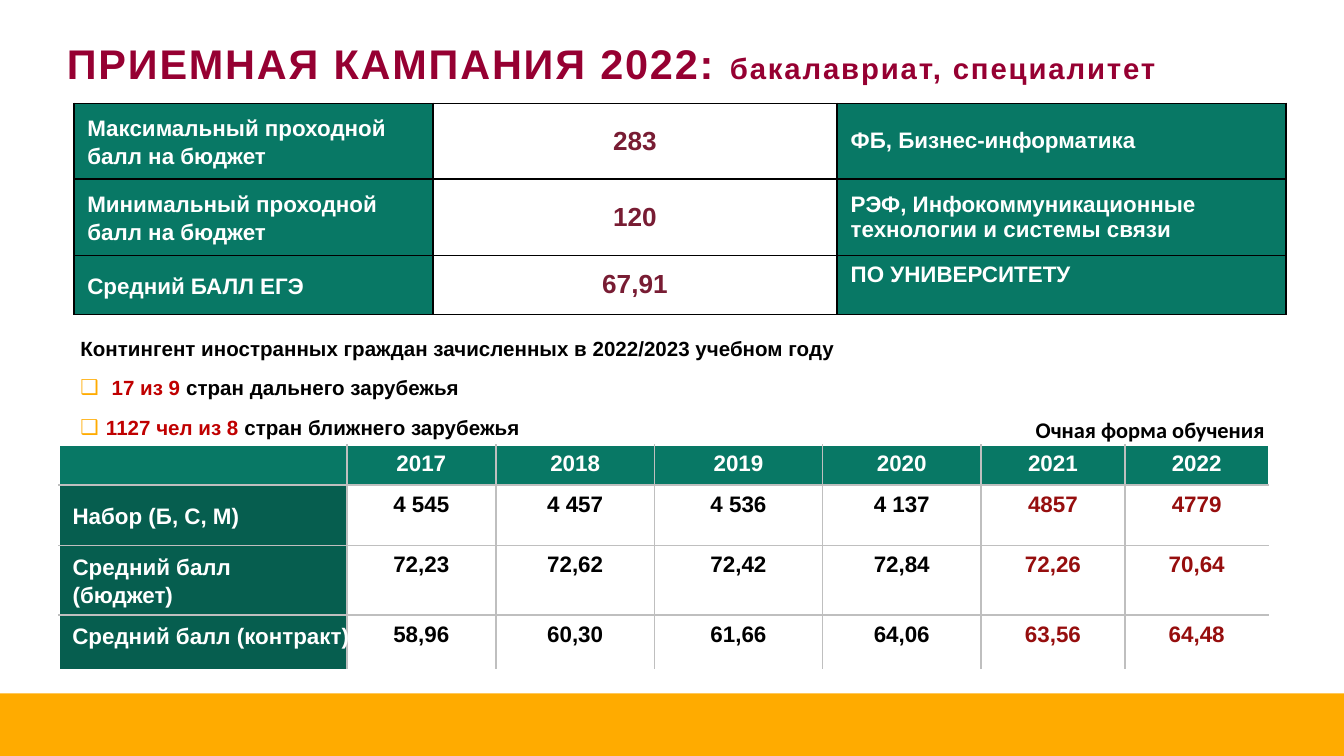
"""Build the 2022 admission campaign slide."""
from lxml.etree import SubElement, fromstring
from pptx import Presentation
from pptx.dml.color import RGBColor as RGB
from pptx.enum.shapes import MSO_SHAPE as Kind
from pptx.enum.text import MSO_ANCHOR as Anchor, PP_ALIGN as Align
from pptx.oxml.ns import nsdecls, qn
from pptx.util import Inches, Pt

HUE = {"gold": "FFAB00", "green": "087865", "dark": "065E4F", "white": "FFFFFF",
       "black": "000000", "gray": "BFBFBF", "wine": "960032", "plum": "781C33",
       "red": "C00000", "brick": "960E0E"}
WIDE, BAND = 10, 5.16
HIGH = WIDE * 9 / 16

TITLE = [("ПРИЕМНАЯ КАМПАНИЯ 2022: ", 22.2), ("бакалавриат, специалитет", 15.7)]
SCORES = [
    ("Максимальный проходной балл на бюджет", "283", "ФБ, Бизнес-информатика"),
    ("Минимальный проходной балл на бюджет", "120",
     "РЭФ, Инфокоммуникационные технологии и системы связи"),
    ("Средний БАЛЛ ЕГЭ", "67,91", "ПО УНИВЕРСИТЕТУ"),
]
YEARS = [
    ("", "2017", "2018", "2019", "2020", "2021", "2022"),
    ("Набор (Б, С, М)", "4 545", "4 457", "4 536", "4 137", "4857", "4779"),
    ("Средний балл (бюджет)", "72,23", "72,62", "72,42", "72,84", "72,26", "70,64"),
    ("", "58,96", "60,30", "61,66", "64,06", "63,56", "64,48"),
]
HEAD = "Контингент иностранных граждан зачисленных в 2022/2023 учебном году"
LANDS = [(" 17 из 9 ", "стран дальнего зарубежья"),
         ("1127 чел из 8 ", "стран ближнего зарубежья")]
NOTES = [
    ("Средний балл (контракт)", (0.44, 4.58, 2.93, 0.3), "white", "Arial", Align.LEFT),
    ("Очная форма обучения", (7.05, 3.05, 2.46, 0.3), "black", "Calibri", Align.RIGHT),
]


def style(run, size, hue, face="Arial"):
    font = run.font
    font.size, font.bold, font.name = Pt(size), True, face
    font.color.rgb = RGB.from_string(HUE[hue])


def add_run(para, text, size, hue):
    run = para.add_run()
    run.text = text
    style(run, size, hue)
    return run


def add_box(slide, spot):
    frame = slide.shapes.add_textbox(*map(Inches, spot)).text_frame
    frame.word_wrap = True
    return frame


def add_edge(cell, sides, hue):
    props = cell._tc.get_or_add_tcPr()
    for i, side in enumerate(sides):
        props.insert(i, fromstring(
            f'<a:ln{side} {nsdecls("a")} w="12700"><a:solidFill>'
            f'<a:srgbClr val="{HUE[hue]}"/></a:solidFill></a:ln{side}>'))


def fill_cell(cell, text, size, hue, back, align, anchor):
    if back:
        cell.fill.solid()
        cell.fill.fore_color.rgb = RGB.from_string(HUE[back])
    else:
        cell.fill.background()
    cell.vertical_anchor = anchor
    para = cell.text_frame.paragraphs[0]
    para.alignment = align
    if text:
        add_run(para, text, size, hue)
    else:
        SubElement(para._p, qn("a:endParaRPr"), sz=str(size * 100))
    return para


def add_grid(slide, data, left, top, cols, rows):
    shape = slide.shapes.add_table(len(rows), len(cols), Inches(left), Inches(top),
                                   Inches(sum(cols)), Inches(sum(rows)))
    grid = shape.table
    grid.first_row = grid.horz_banding = False
    for col, size in zip(grid.columns, cols):
        col.width = Inches(size)
    for row, size in zip(grid.rows, rows):
        row.height = Inches(size)
    return [(r, c, grid.cell(r, c), text)
            for r, line in enumerate(data) for c, text in enumerate(line)]


def add_years(slide):
    cols, rows = [2.14, 1.11, 1.18, 1.25, 1.18, 1.07, 1.07], [0.3, 0.45, 0.51, 0.41]
    for r, c, cell, text in add_grid(slide, YEARS, 0.44, 3.31, cols, rows):
        label = c == 0
        back = "green" if r == 0 else "dark" if label else None
        hue = "white" if back else "brick" if c > 4 else "black"
        para = fill_cell(cell, text, 12, hue, back,
                         Align.LEFT if label else Align.CENTER,
                         Anchor.MIDDLE if label else Anchor.TOP)
        if label and text:
            para.line_spacing = Pt(15)
        inner = {"L": c > 0, "R": c < len(cols) - 1, "T": r > 0, "B": r < len(rows) - 1}
        add_edge(cell, [side for side, shown in inner.items() if shown], "gray")


def add_scores(slide):
    cols, rows = [2.67, 3.01, 3.34], [0.56, 0.57, 0.44]
    for r, c, cell, text in add_grid(slide, SCORES, 0.55, 0.77, cols, rows):
        size, hue, back = (14, "plum", None) if c == 1 else (12, "white", "green")
        last = (r, c) == (2, 2)
        para = fill_cell(cell, text, size, hue, back,
                         Align.CENTER if c == 1 else Align.LEFT,
                         Anchor.TOP if last else Anchor.MIDDLE)
        if c == 0:
            para.line_spacing = Pt(15)
        add_edge(cell, "LRTB", "black")


def add_lands(slide):
    frame = add_box(slide, (0.5, 2.45, 9, 0.88))
    add_run(frame.paragraphs[0], HEAD, 11, "black")
    for i, (count, place) in enumerate(LANDS):
        para = frame.add_paragraph()
        props = para._p.get_or_add_pPr()
        props.set("marL", str(Inches(0.19)))
        props.set("indent", str(Inches(-0.19)))
        tint = SubElement(props, qn("a:buClr"))
        SubElement(tint, qn("a:srgbClr"), val=HUE["gold"])
        SubElement(props, qn("a:buFont"), typeface="Arial")
        SubElement(props, qn("a:buChar"), char="❑")
        if i == 0:
            para.space_before = para.space_after = Pt(8)
        add_run(para, count, 11, "red")
        add_run(para, place, 11, "black")


def add_title(slide):
    frame = add_box(slide, (0.4, 0.08, 8.9, 0.71))
    frame.vertical_anchor = Anchor.MIDDLE
    frame.margin_top = Inches(0.11)
    for text, size in TITLE:
        run = add_run(frame.paragraphs[0], text, size, "wine")
        run._r.get_or_add_rPr().set("spc", "100")


def add_notes(slide):
    for text, spot, hue, face, align in NOTES:
        para = add_box(slide, spot).paragraphs[0]
        para.text = text
        para.alignment = align
        style(para.runs[0], 12, hue, face)


def main():
    deck = Presentation()
    deck.slide_width, deck.slide_height = Inches(WIDE), Inches(HIGH)
    slide = deck.slides.add_slide(deck.slide_layouts[6])
    band = slide.shapes.add_shape(Kind.RECTANGLE, 0, Inches(BAND),
                                  Inches(WIDE), Inches(HIGH - BAND))
    band.shadow.inherit = False
    band.fill.solid()
    band.fill.fore_color.rgb = RGB.from_string(HUE["gold"])
    band.line.fill.background()
    for add in (add_lands, add_years, add_scores, add_title, add_notes):
        add(slide)
    deck.save("out.pptx")


if __name__ == "__main__":
    main()
